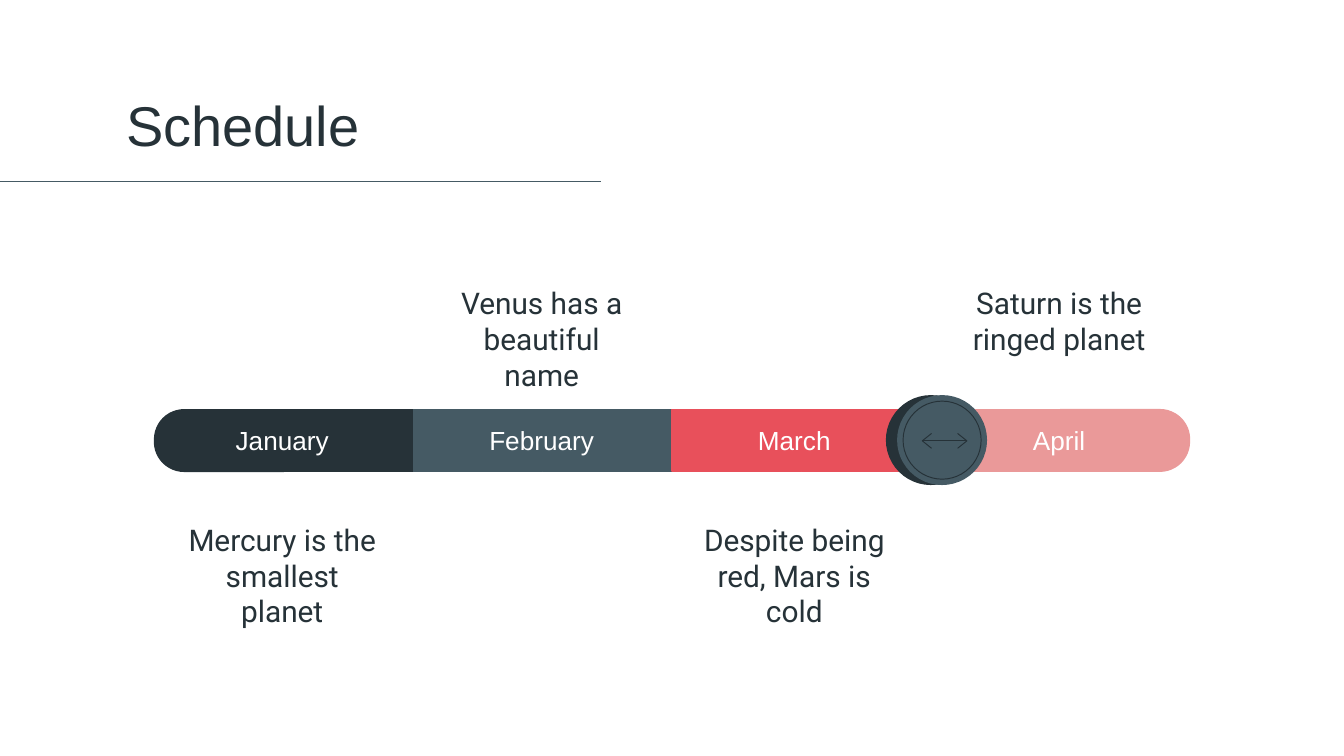
from pptx import Presentation
from pptx import util as u
from pptx.dml import color as c
from pptx.enum import shapes, text
from pptx.oxml import ns, xmlchemy

DARK, SLATE, RED, PINK, WHITE = "263238", "455A64", "E8505B", "EA9999", "FFFFFF"
MONTHS = [
    ("January", "Mercury is the smallest planet", DARK, 151.2),
    ("February", "Venus has a beautiful name", SLATE, 290.2),
    ("March", "Despite being red, Mars is cold", RED, 425.5),
    ("April", "Saturn is the ringed planet", PINK, 567.4),
]
BAR_LEFT, BAR_TOP, BAR_HEIGHT, TILE_WIDTH = 82.8, 219.5, 33, 69.3
LABEL_WIDTH, CAPTION_WIDTH = 135.4, 116.6
ABOVE, BELOW = 145.4, 272.2
KNOB_X, KNOB_Y = 504.7, 235.8


def rgb(value):
    return c.RGBColor.from_string(value)


class SlideBuilder:
    heading_font = "Arial"
    body_font = "Roboto"

    def __init__(self, slide):
        self.slide = slide

    def style(self, shape, fill=None, line=None, weight=0.75):
        shape.shadow.inherit = False
        if fill:
            shape.fill.solid()
            shape.fill.fore_color.rgb = rgb(fill)
        else:
            shape.fill.background()
        if line:
            shape.line.color.rgb = rgb(line)
            shape.line.width = u.Pt(weight)
        else:
            shape.line.fill.background()

    def shape(self, kind, left, top, width, height, fill=None, line=None, weight=0.75):
        shape = self.slide.shapes.add_shape(
            kind, u.Pt(left), u.Pt(top), u.Pt(width), u.Pt(height))
        self.style(shape, fill, line, weight)
        return shape

    def bar_end(self, left, color, rotation):
        shape = self.shape(
            shapes.MSO_SHAPE.ROUND_2_SAME_RECTANGLE,
            left + (TILE_WIDTH - BAR_HEIGHT) / 2,
            BAR_TOP + (BAR_HEIGHT - TILE_WIDTH) / 2,
            BAR_HEIGHT, TILE_WIDTH, color, color)
        shape.adjustments[0] = 0.48
        shape.rotation = rotation

    def circle(self, center_x, diameter, fill=None, line=None):
        self.shape(shapes.MSO_SHAPE.OVAL, center_x - diameter / 2,
                   KNOB_Y - diameter / 2, diameter, diameter, fill, line, 0.5)

    def polyline(self, points, color, weight):
        start, *rest = [(u.Pt(x), u.Pt(y)) for x, y in points]
        builder = self.slide.shapes.build_freeform(*start)
        builder.add_line_segments(rest, close=False)
        self.style(builder.convert_to_shape(), line=color, weight=weight)

    def line(self, start_x, start_y, end_x, end_y, color, weight):
        connector = self.slide.shapes.add_connector(
            shapes.MSO_CONNECTOR.STRAIGHT,
            u.Pt(start_x), u.Pt(start_y), u.Pt(end_x), u.Pt(end_y))
        connector.line.color.rgb = rgb(color)
        connector.line.width = u.Pt(weight)
        connector._element.spPr.append(xmlchemy.OxmlElement("a:effectLst"))

    def text(self, words, left, top, width, height, size, font, color,
             anchor=text.MSO_ANCHOR.TOP, align=text.PP_ALIGN.CENTER):
        box = self.slide.shapes.add_textbox(
            u.Pt(left), u.Pt(top), u.Pt(width), u.Pt(height))
        frame = box.text_frame
        frame.word_wrap = True
        frame.vertical_anchor = anchor
        frame.margin_left = frame.margin_right = u.Pt(7.2)
        frame.margin_top = frame.margin_bottom = u.Pt(7.2)
        frame.text = words
        paragraph = frame.paragraphs[0]
        paragraph.alignment = align
        for run in paragraph.runs:
            run.font.size = u.Pt(size)
            run.font.name = font
            run.font.color.rgb = rgb(color)


def add_timeline(builder):
    last_tile = 2 * len(MONTHS) - 1
    for tile in range(last_tile + 1):
        left = BAR_LEFT + tile * TILE_WIDTH
        color = MONTHS[tile // 2][2]
        if tile in (0, last_tile):
            builder.bar_end(left, color, 270 if tile == 0 else 90)
        else:
            builder.shape(shapes.MSO_SHAPE.RECTANGLE, left, BAR_TOP,
                          TILE_WIDTH, BAR_HEIGHT, color, color)


def add_knob(builder):
    builder.circle(KNOB_X - 6, 48.2, DARK)
    builder.circle(KNOB_X, 48.2, SLATE)
    builder.circle(KNOB_X, 41.8, line=DARK)
    for tip, direction in ((494.1, 1), (518, -1)):
        back = tip + direction * 5
        builder.polyline([(back, KNOB_Y - 3.6), (tip, KNOB_Y + 0.4),
                          (back, KNOB_Y + 4.4)], DARK, 0.5)
    builder.line(494.1, KNOB_Y + 0.4, 518, KNOB_Y + 0.4, DARK, 0.5)


def add_labels(builder):
    for index, (month, caption, _, center) in enumerate(MONTHS):
        builder.text(month, center - LABEL_WIDTH / 2, 218.2, LABEL_WIDTH, 35.3,
                     14, builder.heading_font, WHITE, text.MSO_ANCHOR.MIDDLE)
        builder.text(caption, center - CAPTION_WIDTH / 2,
                     ABOVE if index % 2 else BELOW, CAPTION_WIDTH, 48.2,
                     16, builder.body_font, DARK)


def main():
    presentation = Presentation()
    presentation.slide_width = u.Pt(720)
    presentation.slide_height = u.Pt(405)
    slide = presentation.slides.add_slide(presentation.slide_layouts[6])
    builder = SlideBuilder(slide)
    builder.line(-9.4, 97.2, 321.8, 97.2, SLATE, 0.75)
    builder.text("Schedule", 60.5, 31.7, 344.9, 59.8, 30, builder.heading_font,
                 DARK, text.MSO_ANCHOR.BOTTOM, text.PP_ALIGN.LEFT)
    add_timeline(builder)
    add_knob(builder)
    add_labels(builder)
    presentation.save("out.pptx")


if __name__ == "__main__":
    main()
